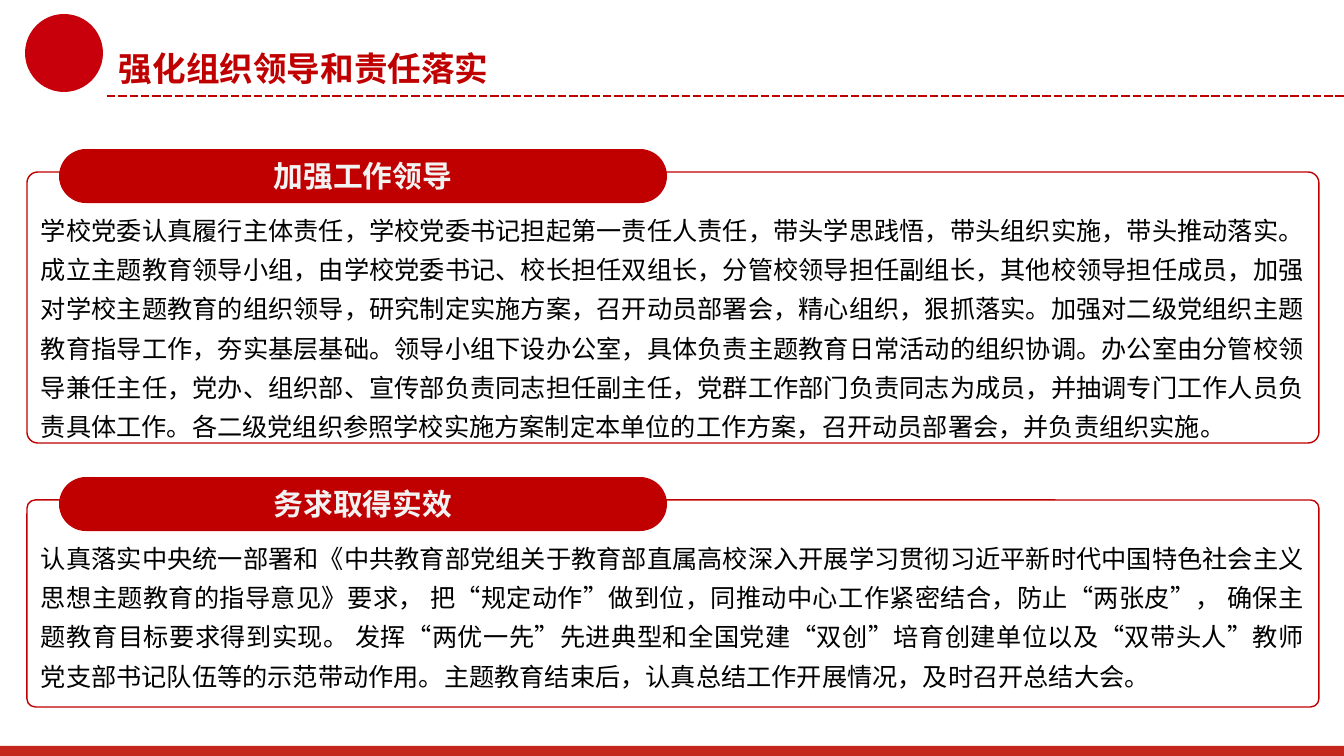
from lxml import etree
from pptx import Presentation
from pptx import util as u
from pptx.dml.color import RGBColor
from pptx.enum import dml, shapes, text
from pptx.oxml.ns import qn

PX = 914400 / 100.8
FONT = "Noto Sans CJK SC"
RED = "C00000"
SECTIONS = [
    (172, 271, "加强工作领导",
     "学校党委认真履行主体责任，学校党委书记担起第一责任人责任，带头学思践悟，带头组织实施，带头推动落实。"
     "成立主题教育领导小组，由学校党委书记、校长担任双组长，分管校领导担任副组长，其他校领导担任成员，"
     "加强对学校主题教育的组织领导，研究制定实施方案，召开动员部署会，精心组织，狠抓落实。"
     "加强对二级党组织主题教育指导工作，夯实基层基础。领导小组下设办公室，具体负责主题教育日常活动的组织协调。"
     "办公室由分管校领导兼任主任，党办、组织部、宣传部负责同志担任副主任，党群工作部门负责同志为成员，"
     "并抽调专门工作人员负责具体工作。各二级党组织参照学校实施方案制定本单位的工作方案，"
     "召开动员部署会，并负责组织实施。"),
    (500, 207, "务求取得实效",
     "认真落实中央统一部署和《中共教育部党组关于教育部直属高校深入开展学习贯彻习近平新时代中国特色社会主义"
     "思想主题教育的指导意见》要求， 把“规定动作”做到位，同推动中心工作紧密结合，防止“两张皮”， "
     "确保主题教育目标要求得到实现。 发挥“两优一先”先进典型和全国党建“双创”培育创建单位以及“双带头人”"
     "教师党支部书记队伍等的示范带动作用。主题教育结束后，认真总结工作开展情况，及时召开总结大会。"),
]


def px(value):
    return u.Emu(round(value * PX))


def color(value):
    return RGBColor.from_string(value)


def add_block(page, kind, x, y, w, h, fill=None, line=None):
    block = page.shapes.add_shape(kind, px(x), px(y), px(w), px(h))
    block.shadow.inherit = False
    if fill:
        block.fill.solid()
        block.fill.fore_color.rgb = color(fill)
    else:
        block.fill.background()
    if line:
        block.line.color.rgb = color(line)
        block.line.width = u.Pt(1)
    else:
        block.line.fill.background()
    return block


def write(frame, words, size, ink, align, bold=False):
    frame.text = words
    para = frame.paragraphs[0]
    para.alignment = align
    span = para.runs[0]
    span.font.size = u.Pt(size)
    span.font.bold = bold
    span.font.color.rgb = color(ink)
    span.font.name = FONT
    etree.SubElement(span.font._element, qn("a:ea"), typeface=FONT)
    return para


def add_text(page, x, y, w, h, words, size, ink, bold=False):
    frame = page.shapes.add_textbox(px(x), px(y), px(w), px(h)).text_frame
    frame.word_wrap = True
    frame.margin_left = frame.margin_right = 0
    frame.margin_top = frame.margin_bottom = 0
    return write(frame, words, size, ink, text.PP_ALIGN.JUSTIFY, bold)


def add_rule(page, x, y, end):
    rule = page.shapes.add_connector(
        shapes.MSO_CONNECTOR.STRAIGHT, px(x), px(y), px(end), px(y))
    rule.line.color.rgb = color(RED)
    rule.line.width = u.Pt(2)
    rule.line.dash_style = dml.MSO_LINE.SQUARE_DOT
    etree.SubElement(rule._element.spPr, qn("a:effectLst"))


def add_section(page, top, height, heading, body):
    rounded = shapes.MSO_SHAPE.ROUNDED_RECTANGLE
    border = add_block(page, rounded, 27, top, 1292, height, line=RED)
    border.adjustments[0] = 0.04
    pill = add_block(page, rounded, 59, top - 23, 608, 54, fill=RED)
    pill.adjustments[0] = 0.5
    pill.text_frame.vertical_anchor = text.MSO_ANCHOR.MIDDLE
    write(pill.text_frame, heading, 21.3, "F2F2F2", text.PP_ALIGN.CENTER, True)
    para = add_text(page, 41, top + 34, 1264, 112, body, 18, "000000")
    para.line_spacing = 1.3


def main():
    deck = Presentation()
    deck.slide_width, deck.slide_height = px(1344), px(756)
    page = deck.slides.add_slide(deck.slide_layouts[6])
    add_block(page, shapes.MSO_SHAPE.OVAL, 25, 14, 78, 78, fill="C7000B")
    add_rule(page, 107, 96, 1344)
    add_block(page, shapes.MSO_SHAPE.RECTANGLE, 0, 746, 1344, 10, fill="C4261D")
    add_text(page, 119, 48, 377, 40, "强化组织领导和责任落实", 24, RED, True)
    for section in SECTIONS:
        add_section(page, *section)
    deck.save("out.pptx")


if __name__ == "__main__":
    main()
